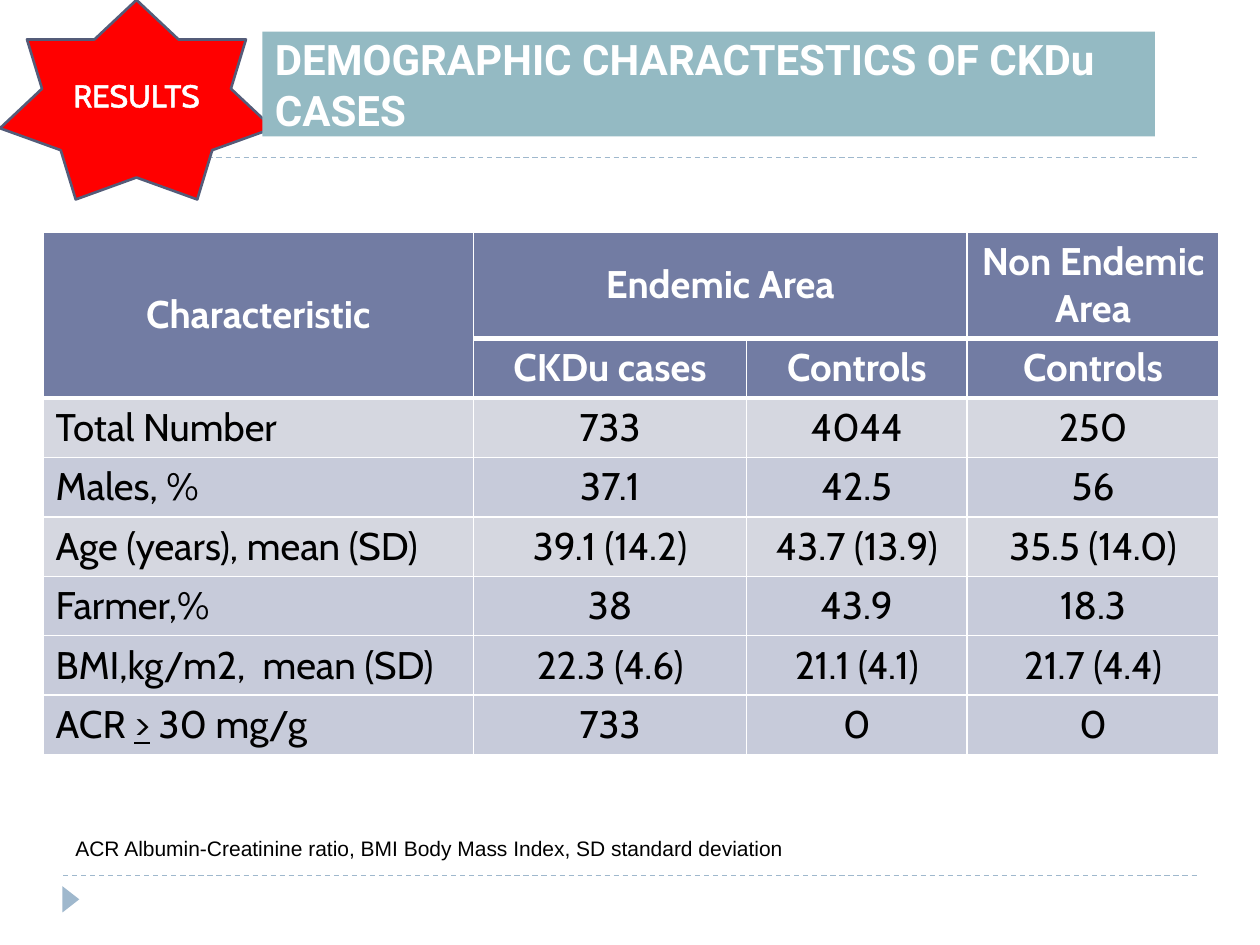
from dataclasses import dataclass

from lxml.etree import SubElement
from pptx import Presentation
from pptx.dml.color import RGBColor
from pptx.enum.dml import MSO_LINE
from pptx.enum.shapes import MSO_CONNECTOR, MSO_SHAPE
from pptx.enum.text import MSO_ANCHOR, PP_ALIGN
from pptx.oxml.ns import qn
from pptx.util import Inches, Pt

COLORS = {
    "white": "FFFFFF", "black": "000000", "rule": "9FB8CD", "red": "FF0000",
    "star_edge": "545C79", "banner": "94BAC3", "header": "727CA3",
    "light": "D5D7E0", "dark": "C7CBDA",
}
COLUMNS, ROWS = 120, 90  # slide grid, twelve steps to the inch


@dataclass
class Box:
    """A place on the slide, in grid columns and rows."""
    x: float
    y: float
    w: float
    h: float

    def emu(self) -> tuple:
        return tuple(grid(v) for v in (self.x, self.y, self.w, self.h))


@dataclass
class TableRow:
    texts: tuple
    fill: str
    height: float = 5.65
    header: bool = False
    top: float = 1
    bottom: float = 1


def grid(steps: float) -> int:
    return Inches(steps / 12)


def rgb(name: str) -> RGBColor:
    return RGBColor.from_string(COLORS[name])


def solid_line(parent, tag: str, color: str, width: float):
    ln = SubElement(parent, qn(tag), w=str(Pt(width)))
    fill = SubElement(ln, qn("a:solidFill"))
    SubElement(fill, qn("a:srgbClr"), val=COLORS[color])
    return ln


def write(tf, text, *, size: float, font: str, color: str, bold=False,
          align=PP_ALIGN.LEFT, anchor=MSO_ANCHOR.MIDDLE, outline: float = 0) -> None:
    """Write one paragraph; text is a string or (text, underlined) pairs."""
    tf.word_wrap = True
    tf.vertical_anchor = anchor
    p = tf.paragraphs[0]
    p.alignment = align
    for part, underlined in [(text, False)] if isinstance(text, str) else text:
        r = p.add_run()
        r.text = part
        r.font.size, r.font.name, r.font.bold = Pt(size), font, bold
        r.font.color.rgb = rgb(color)
        if underlined:
            r.font.underline = True
        if outline:
            rPr = r.font._element
            rPr.insert(0, solid_line(rPr, "a:ln", color, outline))


def add_shape(s, kind, box: Box, fill: str, edge: str = "", rotation: float = 0):
    sp = s.shapes.add_shape(kind, *box.emu())
    sp.shadow.inherit = False
    sp.rotation = rotation
    sp.fill.solid()
    sp.fill.fore_color.rgb = rgb(fill)
    if edge:
        sp.line.color.rgb = rgb(edge)
        sp.line.width = Pt(1.5)
    else:
        sp.line.fill.background()
    return sp


def add_rule(s, y: float) -> None:
    left, right = grid(6), grid(COLUMNS - 6)
    rule = s.shapes.add_connector(MSO_CONNECTOR.STRAIGHT, left, grid(y), right, grid(y))
    rule.line.color.rgb = rgb("rule")
    rule.line.width = Pt(0.75)
    rule.line.dash_style = MSO_LINE.DASH
    SubElement(rule._element.spPr, qn("a:effectLst"))


def add_table(s, box: Box, widths: tuple, rows: list[TableRow]) -> None:
    table = s.shapes.add_table(len(rows), len(widths), *box.emu()).table
    for column, width in zip(table.columns, widths):
        column.width = grid(width)
    for i, row in enumerate(rows):
        table.rows[i].height = grid(row.height)
        for j, text in enumerate(row.texts):
            cell = table.cell(i, j)
            tcPr = cell._tc.get_or_add_tcPr()
            for side, width in zip("LRTB", (1, 1, row.top, row.bottom)):
                solid_line(tcPr, f"a:ln{side}", "white", width)
            cell.fill.solid()
            cell.fill.fore_color.rgb = rgb(row.fill)
            cell.vertical_anchor = MSO_ANCHOR.MIDDLE
            if text:
                centred = row.header or j > 0
                write(cell.text_frame, text, size=22, font="Cabin", bold=row.header,
                      color="white" if row.header else "black", anchor=None,
                      align=PP_ALIGN.CENTER if centred else PP_ALIGN.LEFT)
    table.cell(0, 0).merge(table.cell(1, 0))
    table.cell(0, 1).merge(table.cell(0, 2))


TABLE_ROWS = [
    TableRow(("Characteristic", "Endemic Area", "", "Non Endemic Area"),
             "header", height=10, header=True, bottom=3),
    TableRow(("", "CKDu cases", "Controls", "Controls"),
             "header", header=True, top=3, bottom=3),
    TableRow(("Total Number", "733", "4044", "250"), "light", top=3),
    TableRow(("Males, %", "37.1", "42.5", "56"), "dark"),
    TableRow(("Age (years), mean (SD)", "39.1 (14.2)", "43.7 (13.9)", "35.5 (14.0)"), "light"),
    TableRow(("Farmer,%", "38", "43.9", "18.3"), "dark"),
    TableRow(("BMI,kg/m2,  mean (SD)", "22.3 (4.6)", "21.1 (4.1)", "21.7 (4.4)"), "dark"),
    TableRow(([("ACR ", False), (">", True), (" 30 mg/g", False)], "733", "0", "0"), "dark"),
]


def main() -> None:
    prs = Presentation()
    prs.slide_width, prs.slide_height = grid(COLUMNS), grid(ROWS)
    s = prs.slides.add_slide(prs.slide_layouts[6])

    # Dashed rules and footer marker
    add_rule(s, 83.4)
    add_rule(s, 15)
    add_shape(s, MSO_SHAPE.ISOSCELES_TRIANGLE, Box(5.5, 84.85, 2.5, 1.6), "rule", rotation=90)

    # Results star
    star = add_shape(s, MSO_SHAPE.STAR_7_POINT, Box(0, 0, 26, 19), "red", "star_edge")
    write(star.text_frame, "RESULTS", size=18, font="Cabin", color="white",
          align=PP_ALIGN.CENTER, outline=1.45)

    # Demographic table
    height = sum(row.height for row in TABLE_ROWS)
    add_table(s, Box(4.1, 22.1, 112, height), (41, 26, 21, 24), TABLE_ROWS)

    # Title banner
    banner = add_shape(s, MSO_SHAPE.RECTANGLE, Box(25, 3, 85, 10), "banner")
    write(banner.text_frame, "DEMOGRAPHIC CHARACTESTICS OF CKDu CASES",
          size=24, font="Roboto", color="white", bold=True)

    # Abbreviations
    note = s.shapes.add_textbox(*Box(6, 79, 114, 3.6).emu())
    write(note.text_frame,
          "ACR Albumin-Creatinine ratio, BMI Body Mass Index, SD standard deviation",
          size=12, font="Arial", color="black", anchor=MSO_ANCHOR.TOP)

    prs.save("out.pptx")


if __name__ == "__main__":
    main()
